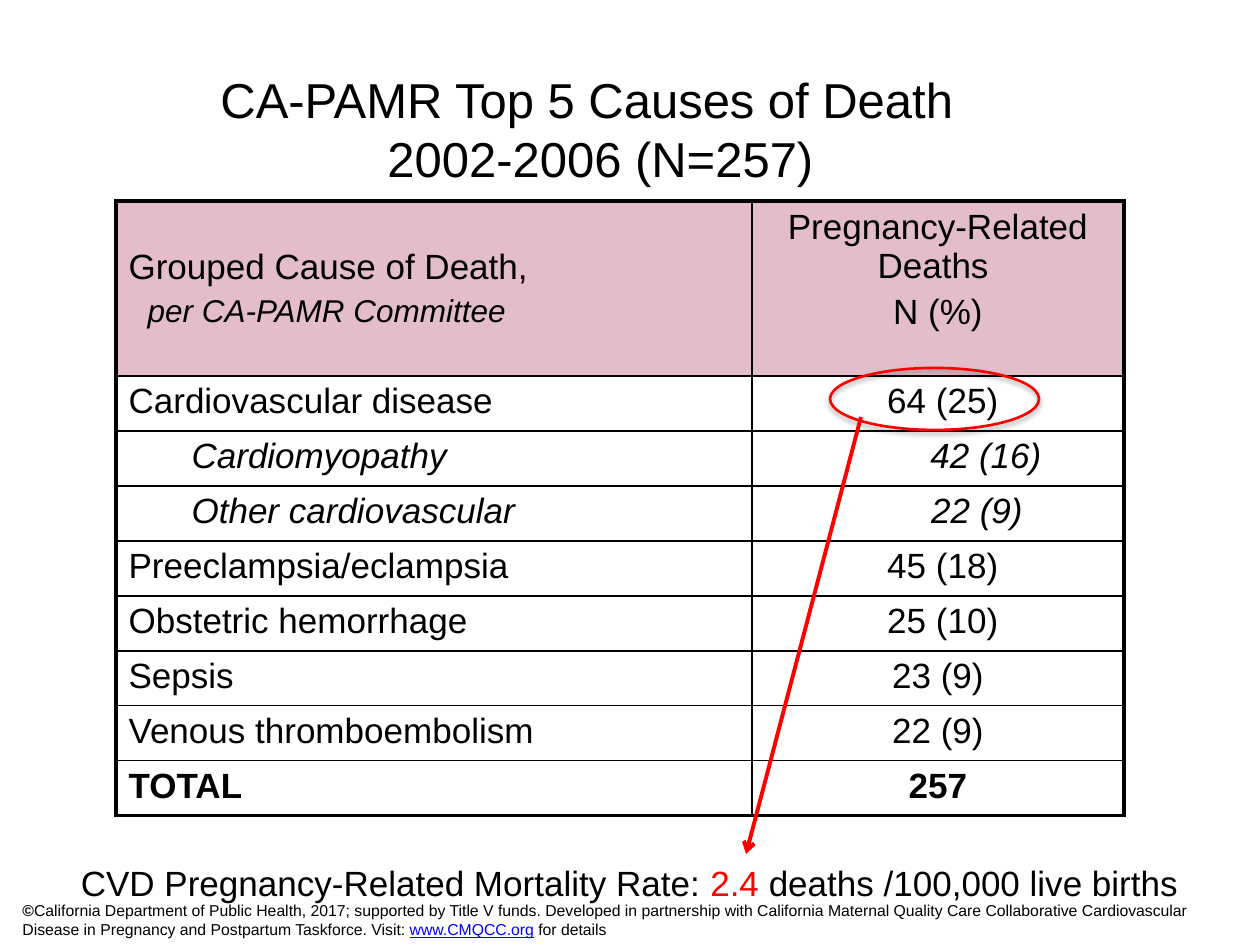
"""Build the slide on the top five causes of death found by CA-PAMR."""
from dataclasses import dataclass
from typing import Optional

from pptx import Presentation
from pptx.dml.color import RGBColor
from pptx.enum.shapes import MSO_CONNECTOR as Connector, MSO_SHAPE as Shape
from pptx.enum.text import MSO_ANCHOR as Anchor, MSO_AUTO_SIZE as AutoSize, PP_ALIGN as Align
from pptx.oxml import parse_xml
from pptx.oxml.ns import nsdecls
from pptx.util import Pt

PX = 914400 / 126
FONT = "Arial"
COLORS = {"text": "000000", "accent": "FF0000", "link": "0000FF", "header": "E3BECA"}
HEADER_HEIGHT, ROW_HEIGHT = 175, 55
COLUMN_WIDTHS = (636, 372)
THICK, THIN = 2.25, 1


@dataclass
class Line:
    text: str
    size: int = 20
    bold: bool = False
    italic: bool = False
    indent: int = 0
    before: int = 0


@dataclass
class Cause:
    name: Line
    deaths: Line


HEADER = (
    [Line("Grouped Cause of Death,"),
     Line("per CA-PAMR Committee", size=18, italic=True, indent=19, before=4)],
    [Line("Pregnancy-Related Deaths "), Line("N (%)", before=4)],
)
CAUSES = [
    Cause(Line("Cardiovascular disease"), Line(" 64 (25)")),
    Cause(Line("Cardiomyopathy", italic=True, indent=63), Line("42 (16)", italic=True, indent=96)),
    Cause(Line("Other cardiovascular", italic=True, indent=63), Line("22 (9)", italic=True, indent=78)),
    Cause(Line("Preeclampsia/eclampsia"), Line(" 45 (18)")),
    Cause(Line("Obstetric hemorrhage"), Line(" 25 (10)")),
    Cause(Line("Sepsis"), Line("23 (9)")),
    Cause(Line("Venous thromboembolism"), Line("22 (9)")),
    Cause(Line("TOTAL", bold=True), Line("257", bold=True)),
]


def px(length: int) -> int:
    return round(length * PX)


def rgb(name: str) -> RGBColor:
    return RGBColor.from_string(COLORS[name])


def format_font(font, size: int, color: str, bold: bool, italic: bool, underline: bool) -> None:
    font.name, font.size = FONT, Pt(size)
    font.bold, font.italic, font.underline = bold, italic, underline
    font.color.rgb = rgb(color)


def add_text(paragraph, text: str, *, size: int = 20, color: str = "text", bold: bool = False,
             italic: bool = False, underline: bool = False) -> None:
    for index, part in enumerate(text.split("\n")):
        if index:
            paragraph.add_line_break()
        run = paragraph.add_run()
        run.text = part
        format_font(run.font, size, color, bold, italic, underline)


def add_text_box(slide, left: int, top: int, width: int, height: int,
                 align: Optional[Align] = None):
    box = slide.shapes.add_textbox(px(left), px(top), px(width), px(height))
    box.text_frame.word_wrap = True
    paragraph = box.text_frame.paragraphs[0]
    paragraph.alignment = align
    return paragraph


def add_border(cell, side: str, width: float) -> None:
    cell._tc.get_or_add_tcPr().append(parse_xml(
        f'<a:ln{side} {nsdecls("a")} w="{Pt(width)}"><a:solidFill>'
        f'<a:srgbClr val="{COLORS["text"]}"/></a:solidFill></a:ln{side}>'))


def fill_cell(cell, lines: list[Line], align: Align) -> None:
    frame = cell.text_frame
    for index, line in enumerate(lines):
        paragraph = frame.add_paragraph() if index else frame.paragraphs[0]
        paragraph.alignment = align
        if line.before:
            paragraph.space_before = Pt(line.before)
        if line.indent:
            paragraph._p.get_or_add_pPr().set("marL", str(px(line.indent)))
        add_text(paragraph, line.text, size=line.size, bold=line.bold, italic=line.italic)


def add_causes_table(slide) -> None:
    rows = [HEADER] + [([cause.name], [cause.deaths]) for cause in CAUSES]
    last = len(rows) - 1
    height = HEADER_HEIGHT + last * ROW_HEIGHT
    table = slide.shapes.add_table(len(rows), 2, px(116), px(201),
                                   px(sum(COLUMN_WIDTHS)), px(height)).table
    table.first_row = table.horz_banding = False
    for column, width in zip(table.columns, COLUMN_WIDTHS):
        column.width = px(width)
    for row_index, row in enumerate(rows):
        table.rows[row_index].height = px(ROW_HEIGHT if row_index else HEADER_HEIGHT)
        for column_index, lines in enumerate(row):
            cell = table.cell(row_index, column_index)
            fill_cell(cell, lines, Align.CENTER if column_index else Align.LEFT)
            outer = {"L": column_index == 0, "R": column_index == 1,
                     "T": row_index == 0, "B": row_index == last}
            for side, is_outer in outer.items():
                add_border(cell, side, THICK if is_outer else THIN)
            if row_index:
                cell.fill.background()
            else:
                cell.fill.solid()
                cell.fill.fore_color.rgb = rgb("header")
    table.cell(0, 0).vertical_anchor = Anchor.MIDDLE


def add_ring(slide, left: int, top: int, width: int, height: int) -> None:
    ring = slide.shapes.add_shape(Shape.OVAL, px(left), px(top), px(width), px(height))
    ring.fill.background()
    ring.line.color.rgb = rgb("accent")
    ring.line.width = Pt(1.5)
    ring._element.spPr.append(parse_xml(
        f'<a:effectLst {nsdecls("a")}><a:outerShdw blurRad="{Pt(3.1)}" dist="{Pt(1.8)}" '
        f'dir="5400000" rotWithShape="0"><a:srgbClr val="{COLORS["text"]}">'
        '<a:alpha val="35000"/></a:srgbClr></a:outerShdw></a:effectLst>'))


def add_arrow(slide, start: tuple[int, int], end: tuple[int, int]) -> None:
    arrow = slide.shapes.add_connector(Connector.STRAIGHT, *map(px, start + end))
    arrow.line.color.rgb = rgb("accent")
    arrow.line.width = Pt(THICK)
    arrow.line._get_or_add_ln().append(parse_xml(f'<a:tailEnd {nsdecls("a")} type="arrow"/>'))
    arrow._element.spPr.append(parse_xml(f'<a:effectLst {nsdecls("a")}/>'))


def add_title(slide) -> None:
    title = slide.shapes.title
    title.left, title.top, title.width, title.height = map(px, (116, 79, 955, 98))
    frame = title.text_frame
    frame.auto_size, frame.vertical_anchor = AutoSize.NONE, Anchor.MIDDLE
    frame.paragraphs[0].alignment = Align.CENTER
    add_text(frame.paragraphs[0], "CA-PAMR Top 5 Causes of Death \n 2002-2006 (N=257)", size=28)


def main() -> None:
    presentation = Presentation()
    presentation.slide_width, presentation.slide_height = px(1260), px(945)
    slide = presentation.slides.add_slide(presentation.slide_layouts[5])

    credit = add_text_box(slide, 10, 895, 1231, 50)
    add_text(credit, "©", size=9, bold=True)
    add_text(credit, "California Department of Public Health, 2017; supported by Title V funds. "
             "Developed in partnership with California Maternal Quality Care Collaborative "
             "Cardiovascular Disease in Pregnancy and Postpartum Taskforce. Visit: ", size=9)
    add_text(credit, "www.CMQCC.org", size=9, color="link", underline=True)
    add_text(credit, " for details", size=9)

    add_title(slide)
    add_causes_table(slide)
    add_ring(slide, 830, 368, 209, 62)
    add_arrow(slide, (861, 417), (746, 854))

    rate = add_text_box(slide, 39, 855, 1181, 55, align=Align.CENTER)
    add_text(rate, "CVD Pregnancy-Related Mortality Rate: ")
    add_text(rate, "2.4", color="accent")
    add_text(rate, " deaths /100,000 live births")

    presentation.save("out.pptx")


if __name__ == "__main__":
    main()
